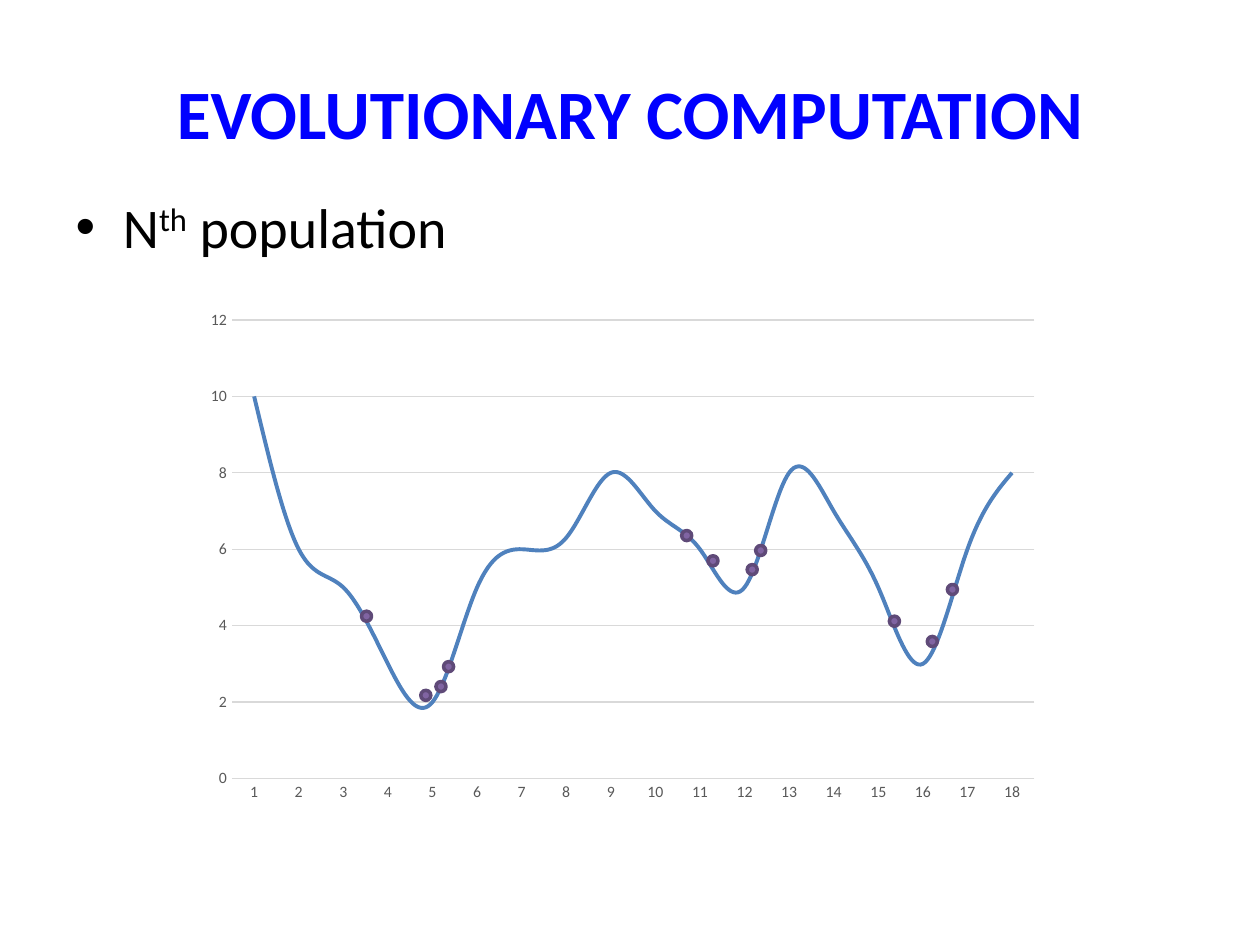
from lxml.etree import SubElement
from pptx import Presentation
from pptx.chart.data import CategoryChartData
from pptx.dml.color import RGBColor
from pptx.enum.chart import XL_CHART_TYPE as ChartType, XL_TICK_MARK as TickMark
from pptx.enum.shapes import MSO_SHAPE as Shape
from pptx.enum.text import MSO_ANCHOR as Anchor, PP_ALIGN as Align
from pptx.oxml.ns import qn
from pptx.util import Inches, Pt

BLACK = RGBColor(0x00, 0x00, 0x00)
TITLE_BLUE = RGBColor(0x00, 0x00, 0xFF)
CURVE_BLUE = RGBColor(0x4F, 0x81, 0xBD)
GRID_GREY = RGBColor(0xD9, 0xD9, 0xD9)
LABEL_GREY = RGBColor(0x59, 0x59, 0x59)
DOT_FILL = RGBColor(0x80, 0x64, 0xA2)
DOT_LINE = RGBColor(0x5F, 0x4A, 0x78)

FONT = "Calibri"
TITLE_BOX = (0.5, 0.5, 9, 0.78)
BODY_BOX = (0.5, 1.48, 9, 5.65)
CHART_BOX = (1.54, 2.38, 6.81, 4.07)
PLOT_BOX = (1.84, 2.54, 6.37, 3.64)
DOT_SIZE = 0.08
VALUE_MAX = 12

LANDSCAPE = [10, 6, 5, 3, 2, 5, 6, 6.3, 8, 7, 6, 5, 8, 7, 5, 3, 6, 8]
POPULATION = [
    (3.52, 4.25), (4.85, 2.18), (5.36, 2.93), (5.19, 2.41),
    (11.29, 5.7), (10.7, 6.36), (12.17, 5.47), (12.36, 5.97),
    (16.21, 3.59), (15.36, 4.12), (16.66, 4.95),
]


def set_values(target, values):
    """Set every attribute named in a dict."""
    for name, value in values.items():
        setattr(target, name, value)


def set_font(font, size, color, bold=False):
    """Format a font."""
    set_values(font, {"name": FONT, "size": Pt(size), "bold": bold})
    font.color.rgb = color


def set_line(line, color, width):
    """Give a line its colour and width in points."""
    line.color.rgb = color
    line.width = Pt(width)


def place(shape, box):
    """Move a shape to a box in inches."""
    set_values(shape, dict(zip(("left", "top", "width", "height"), map(Inches, box))))


def fill_title(title):
    """Write the slide title."""
    place(title, TITLE_BOX)
    title.text_frame.vertical_anchor = Anchor.MIDDLE
    paragraph = title.text_frame.paragraphs[0]
    paragraph.alignment = Align.CENTER
    run = paragraph.add_run()
    run.text = "EVOLUTIONARY COMPUTATION"
    set_font(run.font, 39.6, TITLE_BLUE, bold=True)


def fill_body(body):
    """Write the bullet with its raised ordinal ending."""
    place(body, BODY_BOX)
    paragraph = body.text_frame.paragraphs[0]
    for text, baseline in (("N", 0), ("th", 30000), (" population", 0)):
        run = paragraph.add_run()
        run.text = text
        set_font(run.font, 32, BLACK)
        if baseline:
            run._r.get_or_add_rPr().set("baseline", str(baseline))


def fix_plot_area(chart):
    """Pin the inner plot area to its box."""
    plot_area = chart._chartSpace.chart.plotArea
    for old_layout in plot_area.findall(qn("c:layout")):
        plot_area.remove(old_layout)
    layout = SubElement(plot_area, qn("c:layout"))
    plot_area.insert(0, layout)
    manual = SubElement(layout, qn("c:manualLayout"))
    left, top, width, height = CHART_BOX
    plot_left, plot_top, plot_width, plot_height = PLOT_BOX
    values = {
        "layoutTarget": "inner", "xMode": "edge", "yMode": "edge",
        "x": (plot_left - left) / width, "y": (plot_top - top) / height,
        "w": plot_width / width, "h": plot_height / height,
    }
    for name, value in values.items():
        SubElement(manual, qn(f"c:{name}")).set("val", str(value))


def add_landscape(slide):
    """Add the smooth fitness curve."""
    data = CategoryChartData()
    data.categories = [str(number) for number in range(1, len(LANDSCAPE) + 1)]
    data.add_series("Series 1", LANDSCAPE)
    chart = slide.shapes.add_chart(ChartType.LINE, *map(Inches, CHART_BOX), data).chart
    set_values(chart, {"has_title": False, "has_legend": False})
    set_font(chart.font, 10, BLACK)
    for axis in (chart.category_axis, chart.value_axis):
        set_values(axis, {"major_tick_mark": TickMark.NONE, "minor_tick_mark": TickMark.NONE})
        set_font(axis.tick_labels.font, 9, LABEL_GREY)
    set_line(chart.category_axis.format.line, GRID_GREY, 0.75)
    value_axis = chart.value_axis
    set_values(value_axis, {"minimum_scale": 0, "maximum_scale": VALUE_MAX, "major_unit": 2})
    value_axis.format.line.fill.background()
    set_line(value_axis.major_gridlines.format.line, GRID_GREY, 0.75)
    plot = chart.plots[0]
    plot.vary_by_categories = False
    plot.series[0].smooth = True
    set_line(plot.series[0].format.line, CURVE_BLUE, 2.25)
    fix_plot_area(chart)


def add_individual(slide, category, value):
    """Add a dot at a category position and value of the chart."""
    left, top, width, height = PLOT_BOX
    center_x = left + (category - 0.5) * width / len(LANDSCAPE)
    center_y = top + (1 - value / VALUE_MAX) * height
    box = (center_x - DOT_SIZE / 2, center_y - DOT_SIZE / 2, DOT_SIZE, DOT_SIZE)
    dot = slide.shapes.add_shape(Shape.OVAL, *map(Inches, box))
    dot.shadow.inherit = False
    dot.fill.solid()
    dot.fill.fore_color.rgb = DOT_FILL
    set_line(dot.line, DOT_LINE, 2)


def main():
    """Build and save the slide."""
    presentation = Presentation()
    set_values(presentation, {"slide_width": Inches(10), "slide_height": Inches(7.5)})
    slide = presentation.slides.add_slide(presentation.slide_layouts[1])
    fill_title(slide.shapes.title)
    fill_body(slide.placeholders[1])
    add_landscape(slide)
    for category, value in POPULATION:
        add_individual(slide, category, value)
    presentation.save("out.pptx")


if __name__ == "__main__":
    main()
